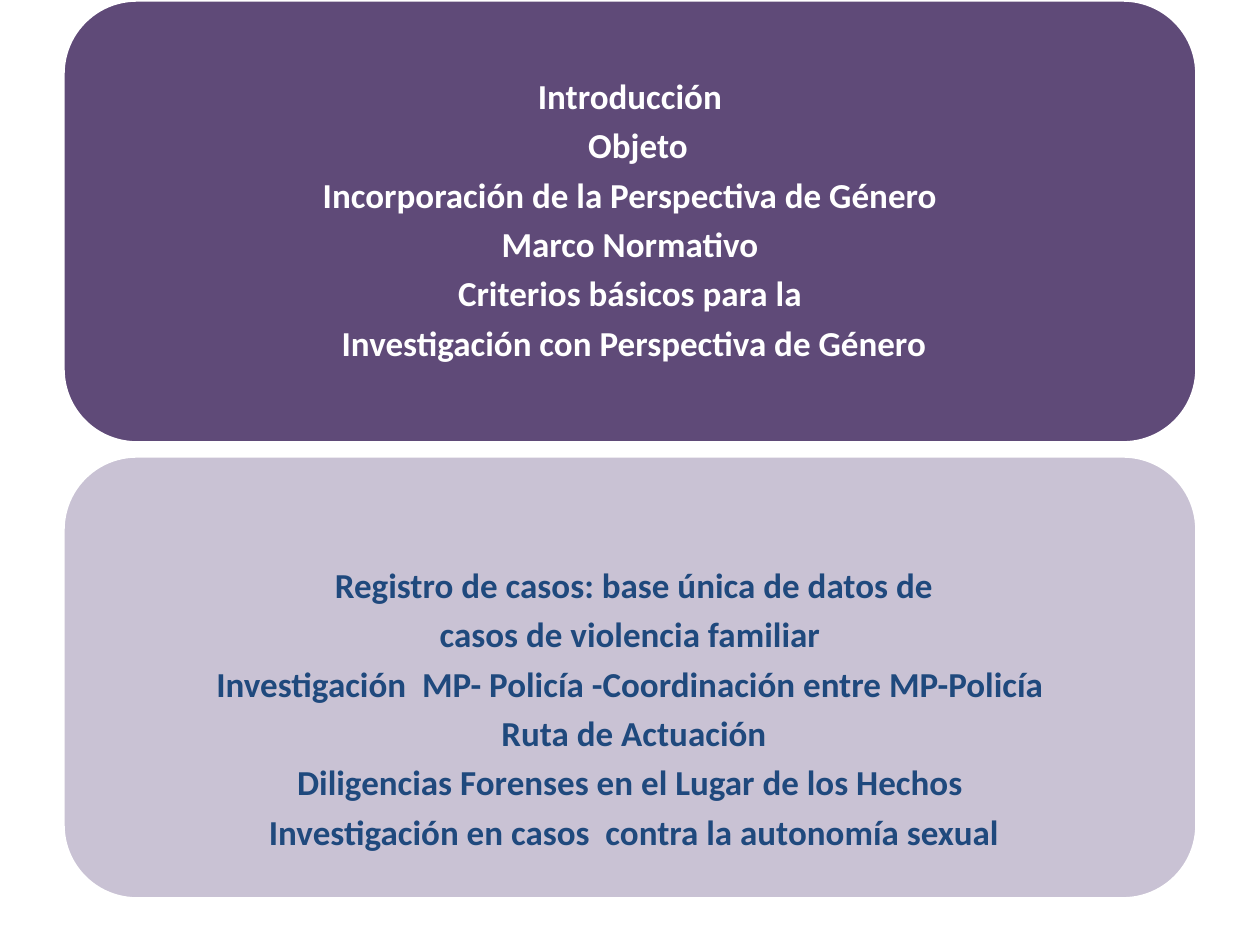
from pptx import Presentation
from pptx.util import Emu, Pt
from pptx.dml.color import RGBColor as RGB
from pptx.enum.shapes import MSO_SHAPE as Shape
from pptx.enum.text import PP_ALIGN as Align, MSO_ANCHOR as Anchor

PX = 914400 // 126
theme = {
    "line": RGB.from_string("FFFFFF"),
    "dark": RGB.from_string("5F4A78"),
    "pale": RGB.from_string("C9C2D4"),
    "white": RGB.from_string("FFFFFF"),
    "blue": RGB.from_string("1F497D"),
    "font": "Calibri",
    "size": Pt(20),
    "edge": Pt(2),
}


def px(n):
    return Emu(n * PX)


def put(obj, vals):
    for key, val in vals.items():
        setattr(obj, key, val)


deck = Presentation()
put(deck, {"slide_width": px(1260), "slide_height": px(945)})
slide = deck.slides.add_slide(deck.slide_layouts[6])

left, wide, high, pitch = 63, 1134, 443, 456
panels = [
    ("dark", "white", 13, [
        ("Introducción", 0),
        ("Objeto", 16),
        ("Incorporación de la Perspectiva de Género", 0),
        ("Marco Normativo", 0),
        ("Criterios básicos para la", 0),
        ("Investigación con Perspectiva de Género", 8),
    ]),
    ("pale", "blue", 79, [
        ("Registro de casos: base única de datos de", 8),
        ("casos de violencia familiar", 0),
        ("Investigación  MP- Policía -Coordinación entre MP-Policía", 0),
        ("Ruta de Actuación", 8),
        ("Diligencias Forenses en el Lugar de los Hechos", 0),
        ("Investigación en casos  contra la autonomía sexual", 8),
    ]),
]

for row, (fill, ink, top, lines) in enumerate(panels):
    box = slide.shapes.add_shape(
        Shape.ROUNDED_RECTANGLE, px(left), px(row * pitch), px(wide), px(high))
    box.shadow.inherit = False
    box.fill.solid()
    box.fill.fore_color.rgb = theme[fill]
    box.line.color.rgb = theme["line"]
    box.line.width = theme["edge"]
    frame = box.text_frame
    put(frame, {"word_wrap": True, "vertical_anchor": Anchor.MIDDLE,
                "margin_left": px(13), "margin_right": px(13),
                "margin_top": px(top), "margin_bottom": px(13)})
    for i, (text, shift) in enumerate(lines):
        para = frame.add_paragraph() if i else frame.paragraphs[0]
        put(para, {"alignment": Align.CENTER, "line_spacing": 0.9,
                   "space_after": Pt(6.6)})
        if shift:
            para._p.get_or_add_pPr().set("marL", str(px(shift)))
        run = para.add_run()
        run.text = text
        put(run.font, {"name": theme["font"], "size": theme["size"], "bold": True})
        run.font.color.rgb = theme[ink]

deck.save("out.pptx")
